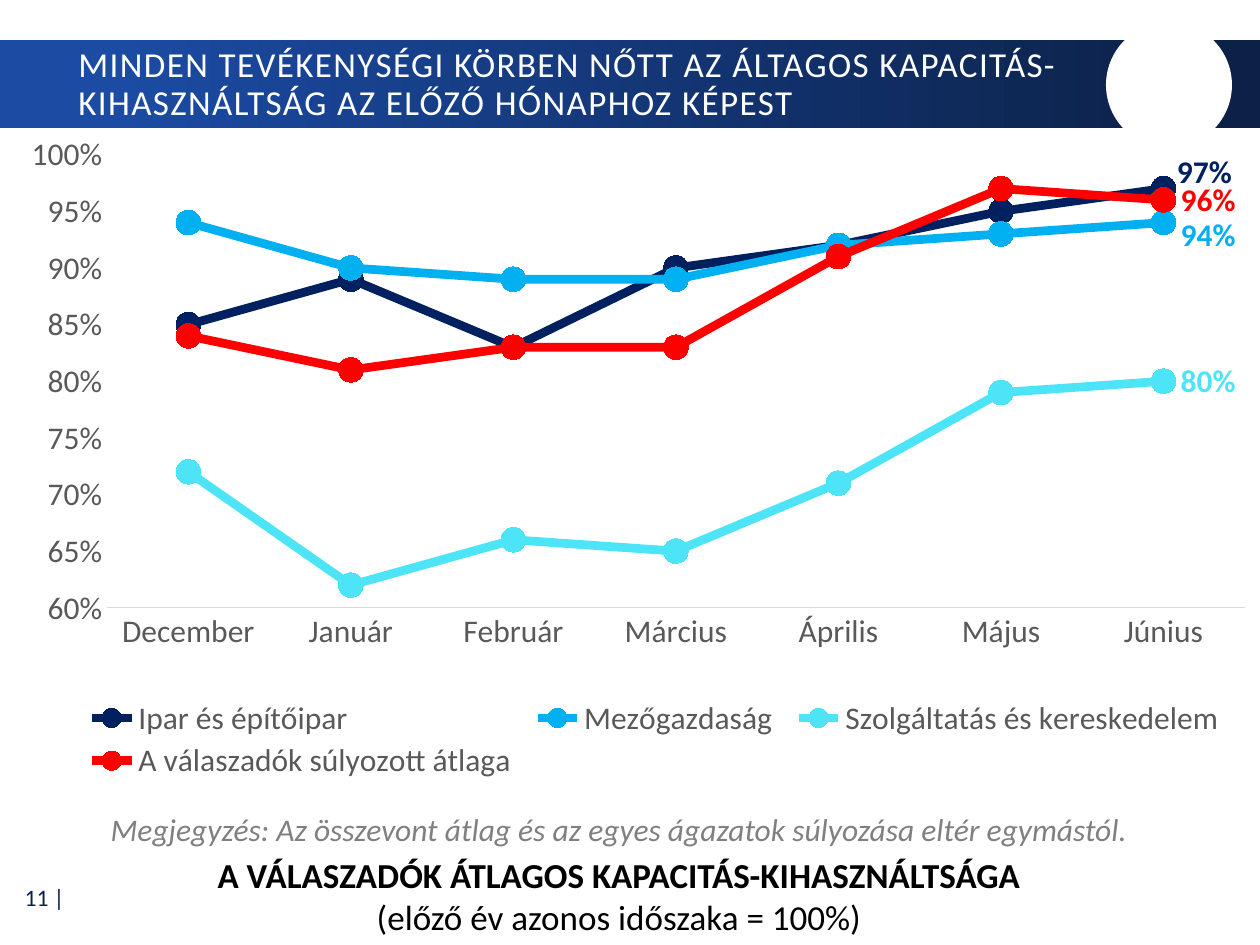
from pptx import Presentation
from pptx.chart.data import CategoryChartData as ChartData
from pptx.dml.color import RGBColor
from pptx.enum.chart import (
    XL_CHART_TYPE as Kind, XL_LABEL_POSITION as Spot, XL_LEGEND_POSITION as Side,
    XL_MARKER_STYLE as Mark, XL_TICK_MARK as Tick)
from pptx.enum.shapes import MSO_SHAPE as Form
from pptx.enum.text import MSO_ANCHOR as Anchor, PP_ALIGN as Align
from pptx.oxml import parse_xml
from pptx.oxml.ns import nsdecls, qn
from pptx.util import Emu, Pt

NAVY, GRAY = "0C2148", "595959"
MONTHS = ["December", "Január", "Február", "Március", "Április", "Május", "Június"]
# name, colour, values, shift of the last label
SERIES = [
    ("Ipar és építőipar", "002060",
     [0.85, 0.89, 0.83, 0.90, 0.92, 0.95, 0.97], (-0.003, -0.024)),
    ("Mezőgazdaság", "00B0F0",
     [0.94, 0.90, 0.89, 0.89, 0.92, 0.93, 0.94], (0, 0.018)),
    ("Szolgáltatás és kereskedelem", "4EE4F8",
     [0.72, 0.62, 0.66, 0.65, 0.71, 0.79, 0.80], None),
    ("A válaszadók súlyozott átlaga", "FF0000",
     [0.84, 0.81, 0.83, 0.83, 0.91, 0.97, 0.96], None),
]


def px(num):
    return Emu(round(num * 914400 / 126))


def rgb(code):
    return RGBColor.from_string(code)


def place(item, index, **parts):
    """Give a chart element a manual layout as its child at index."""
    for old in item.findall(qn("c:layout")):
        item.remove(old)
    tags = "".join(f'<c:{tag} val="{val}"/>' for tag, val in parts.items())
    item.insert(index, parse_xml(
        f'<c:layout {nsdecls("c")}><c:manualLayout>{tags}</c:manualLayout></c:layout>'))


class Deck:
    """Holds the style and the current slide."""
    face = "Calibri"

    def __init__(self, wide, high):
        self.prs = Presentation()
        self.prs.slide_width, self.prs.slide_height = px(wide), px(high)
        self.slide = self.prs.slides.add_slide(self.prs.slide_layouts[6])

    def style(self, font, size, color, bold=False, slant=False):
        font.name, font.size, font.bold, font.italic = self.face, Pt(size), bold, slant
        font.color.rgb = rgb(color)

    def text(self, box, lines, size, color, align=Align.LEFT, anchor=Anchor.TOP,
             bold=(), slant=False, gap=None, track=None):
        """Add a text box; bold holds the numbers of the bold lines."""
        frame = self.slide.shapes.add_textbox(*map(px, box)).text_frame
        frame.word_wrap, frame.vertical_anchor = True, anchor
        frame.text = "\n".join(lines)
        for num, para in enumerate(frame.paragraphs):
            para.alignment = align
            if gap:
                para.line_spacing = gap
            for run in para.runs:
                self.style(run.font, size, color, num in bold, slant)
                if track:
                    run.font._element.set("spc", str(track))

    def shape(self, form, box, fill, end=None):
        """Add a shape without outline; end makes the fill a gradient."""
        item = self.slide.shapes.add_shape(form, *map(px, box))
        item.shadow.inherit = False
        item.line.fill.background()
        if end is None:
            item.fill.solid()
            item.fill.fore_color.rgb = rgb(fill)
            return
        item.fill.gradient()
        item.fill.gradient_angle = 0
        for stop, code, pos in zip(item.fill.gradient_stops, (fill, end), (0.09, 0.95)):
            stop.color.rgb, stop.position = rgb(code), pos

    def chart(self, box, names, rows):
        data = ChartData(number_format="0%")
        data.categories = names
        for name, _, vals, _ in rows:
            data.add_series(name, vals)
        chart = self.slide.shapes.add_chart(
            Kind.LINE_MARKERS, *map(px, box), data).chart
        self.style(chart.font, 18, "000000")
        chart.has_title = False
        self.axes(chart)
        self.legend(chart)
        place(chart._chartSpace.chart.plotArea, 0, layoutTarget="inner", xMode="edge",
              yMode="edge", x=0.085, y=0.04, w=0.903, h=0.655)
        chart.plots[0].vary_by_categories = False
        for line, (_, color, vals, shift) in zip(chart.plots[0].series, rows):
            self.series(line, color, len(vals) - 1, shift)

    def axes(self, chart):
        for axis in (chart.category_axis, chart.value_axis):
            axis.major_tick_mark = axis.minor_tick_mark = Tick.NONE
            axis.has_major_gridlines = False
            self.style(axis.tick_labels.font, 18, GRAY)
        rule = chart.category_axis.format.line
        rule.color.rgb, rule.width = rgb("D9D9D9"), Pt(0.75)
        axis = chart.value_axis
        axis.format.line.fill.background()
        axis.minimum_scale, axis.maximum_scale, axis.major_unit = 0.6, 1, 0.05
        axis.tick_labels.number_format = "0%"
        axis.tick_labels.number_format_is_linked = False

    def legend(self, chart):
        chart.has_legend = True
        key = chart.legend
        key.position, key.include_in_layout = Side.BOTTOM, False
        self.style(key.font, 18, GRAY)
        place(key._element, 1, xMode="edge", yMode="edge", x=0.06, y=0.82, w=0.92, h=0.13)

    def series(self, line, color, last, shift):
        line.smooth = False
        line.format.line.color.rgb, line.format.line.width = rgb(color), Pt(5)
        dot = line.marker
        dot.style, dot.size = Mark.CIRCLE, 14
        dot.format.fill.solid()
        dot.format.fill.fore_color.rgb = rgb(color)
        dot.format.line.color.rgb = rgb(color)
        label = line.points[last].data_label
        self.style(label.font, 18, color, bold=True)
        label.position = Spot.RIGHT
        if shift:
            node = line._element.find(".//" + qn("c:dLbl"))
            place(node, 1, x=shift[0], y=shift[1])


def main():
    deck = Deck(1260, 945)
    deck.text((1, 874, 76, 47), ["11 |"], 13.5, NAVY, Align.RIGHT, Anchor.MIDDLE)
    deck.shape(Form.RECTANGLE, (0, 40, 1260, 88), "1B4BA3", NAVY)
    deck.shape(Form.OVAL, (1106, 22, 126, 126), "FFFFFF")
    deck.text((66, 43, 1048, 84),
              ["MINDEN TEVÉKENYSÉGI KÖRBEN NŐTT AZ ÁLTAGOS KAPACITÁS-"
               "KIHASZNÁLTSÁG AZ ELŐZŐ HÓNAPHOZ KÉPEST"],
              20, "FFFFFF", anchor=Anchor.MIDDLE, gap=0.9, track=80)
    deck.text((111, 847, 1016, 97),
              ["A VÁLASZADÓK ÁTLAGOS KAPACITÁS-KIHASZNÁLTSÁGA",
               "(előző év azonos időszaka = 100%)"],
              20, "000000", Align.CENTER, bold=(0,))
    deck.chart((0, 127, 1260, 692), MONTHS, SERIES)
    deck.text((44, 804, 1150, 50),
              ["Megjegyzés: Az összevont átlag és az egyes ágazatok súlyozása "
               "eltér egymástól."],
              18, "808080", Align.CENTER, slant=True)
    deck.prs.save("out.pptx")


if __name__ == "__main__":
    main()
